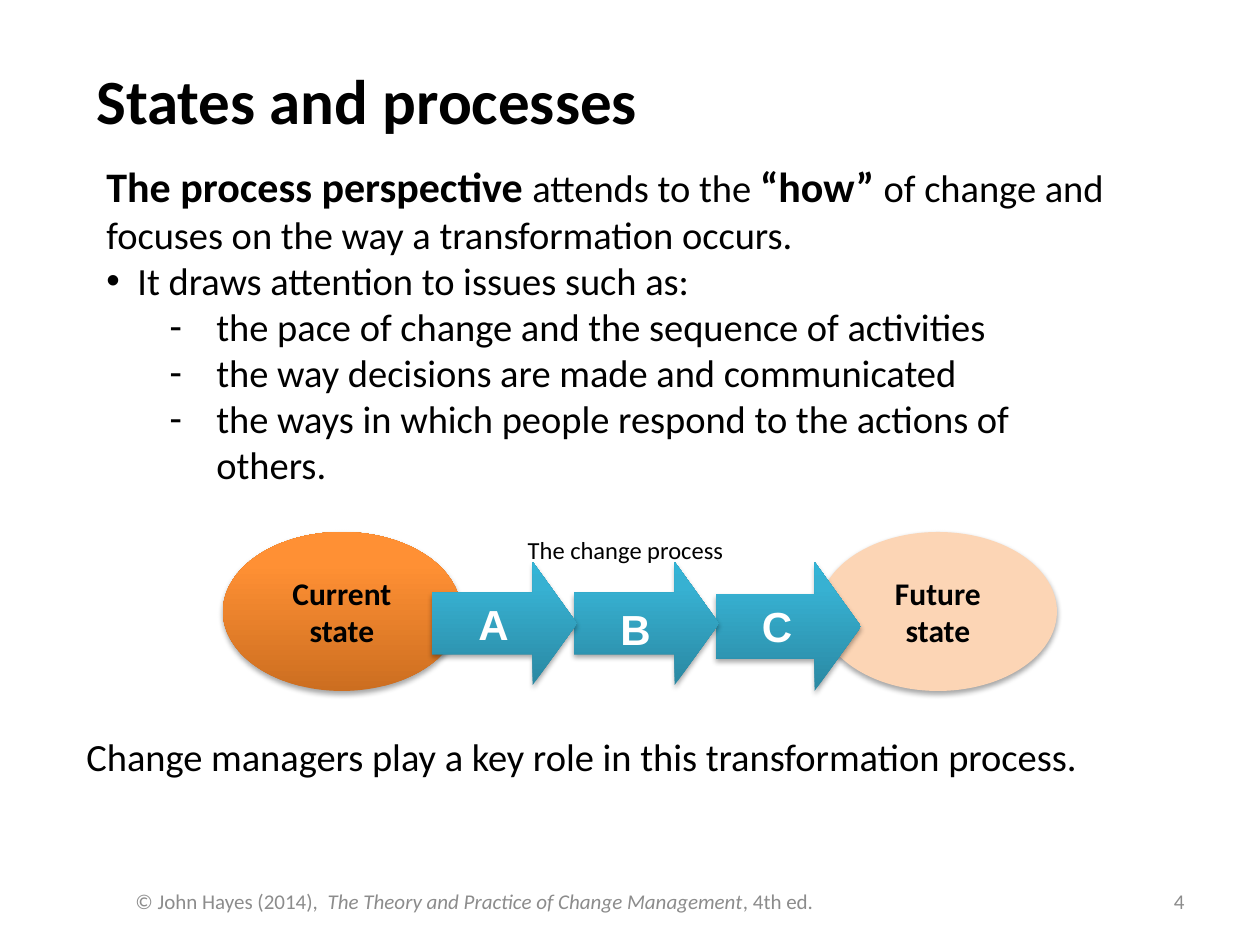
from copy import deepcopy
from dataclasses import dataclass

from lxml import etree
from pptx import Presentation, util as u
from pptx.dml.color import RGBColor
from pptx.enum import shapes, text
from pptx.oxml import ns

KIND = shapes.MSO_SHAPE
ALIGN = text.PP_ALIGN
ANCHOR = text.MSO_ANCHOR


@dataclass(frozen=True)
class Theme:
    font: str = "Calibri"
    label: str = "Arial"
    ink: str = "000000"
    grey: str = "8C8C8C"
    white: str = "FFFFFF"
    peach: str = "FCD5B5"
    orange: tuple = ((0, "CC6E20"), (0.8, "FF9034"), (1, "FF9136"))
    teal: tuple = ((0, "2A88A2"), (0.8, "37B1D2"), (1, "34B4D6"))
    title: int = 36
    lead: int = 24
    body: int = 22
    state: int = 18
    note: int = 14
    foot: int = 12


def px(n):
    return u.Emu(round(n * 914400 / 126))


def sub(node, tag, **attrs):
    return etree.SubElement(node, ns.qn(tag), {k: str(v) for k, v in attrs.items()})


class Deck:
    def __init__(self, theme):
        self.theme = theme
        self.file = Presentation()
        self.file.slide_width, self.file.slide_height = px(1260), px(945)
        self.slide = self.file.slides.add_slide(self.file.slide_layouts[6])
        self.host = self.slide.shapes

    def group(self):
        self.host = self.slide.shapes.add_group_shape().shapes

    def ungroup(self):
        self.host = self.slide.shapes

    def run(self, para, words, size, color=None, bold=False, italic=False, font=None):
        run = para.add_run()
        run.text = words
        face = run.font
        face.name = font or self.theme.font
        face.size = u.Pt(size)
        face.bold, face.italic = bold, italic
        face.color.rgb = RGBColor.from_string(color or self.theme.ink)

    def para(self, frame, runs, align=None, mark=None, left=0, hang=0, level=0):
        last = frame.paragraphs[-1]
        para = frame.add_paragraph() if last.runs else last
        para.alignment = align
        para.level = level
        if mark:
            props = para._p.get_or_add_pPr()
            props.set("marL", str(px(left)))
            props.set("indent", str(-px(hang)))
            sub(props, "a:buFont", typeface=self.theme.label)
            sub(props, "a:buChar", char=mark)
        for words, size, *rest in runs:
            self.run(para, words, size, *rest)

    def box(self, at, runs, align=None, fixed=False):
        frame = self.host.add_textbox(*map(px, at)).text_frame
        frame.word_wrap = True
        if fixed:
            frame.vertical_anchor = ANCHOR.MIDDLE
        else:
            frame.auto_size = text.MSO_AUTO_SIZE.SHAPE_TO_FIT_TEXT
        self.para(frame, runs, align)
        return frame

    def paint(self, shape, fill):
        if isinstance(fill, str):
            shape.fill.solid()
            shape.fill.fore_color.rgb = RGBColor.from_string(fill)
        else:
            shape.fill.gradient()
            shape.fill.gradient_angle = 90
            stops = shape._element.spPr.find(".//" + ns.qn("a:gsLst"))
            stops.append(deepcopy(stops[0]))
            for stop, (place, color) in zip(shape.fill.gradient_stops, fill):
                stop.position = place
                stop.color.rgb = RGBColor.from_string(color)
        shape.line.fill.background()

    def shade(self, shape):
        shape.shadow.inherit = False
        effect = shape._element.spPr.find(ns.qn("a:effectLst"))
        cast = sub(effect, "a:outerShdw", blurRad=u.Pt(3.1), dist=u.Pt(1.8),
                   dir=5400000, rotWithShape=0)
        tone = sub(cast, "a:srgbClr", val=self.theme.ink)
        sub(tone, "a:alpha", val=35000)

    def shape(self, kind, at, fill):
        shape = self.host.add_shape(kind, *map(px, at))
        self.paint(shape, fill)
        self.shade(shape)
        return shape

    def state(self, x, word, fill):
        frame = self.shape(KIND.OVAL, (x, 532, 238, 159), fill).text_frame
        frame.vertical_anchor = ANCHOR.MIDDLE
        for line in (word, "state"):
            self.para(frame, [(line, self.theme.state, None, True)], ALIGN.CENTER)

    def arrow(self, x, high, letter, top):
        t = self.theme
        shape = self.shape(KIND.RIGHT_ARROW, (x, 562, 145, high), t.teal)
        shape.adjustments[1] = 0.36
        frame = shape.text_frame
        frame.vertical_anchor = ANCHOR.TOP
        frame.margin_top = px(top)
        self.para(frame, [(letter, t.lead, t.white, True, False, t.label)], ALIGN.CENTER)


def main():
    t = Theme()
    deck = Deck(t)

    body = deck.box((94, 154, 1042, 344), [
        ("The process perspective ", t.lead, None, True),
        ("attends to the ", t.body),
        ("“how” ", t.lead, None, True),
        ("of change and focuses on the way a transformation occurs.", t.body),
    ])
    deck.para(body, [("It draws attention to issues such as:", t.body)],
              mark="•", left=31, hang=31)
    for issue in (
        "the pace of change and the sequence of activities",
        "the way decisions are made and communicated",
        "the ways in which people respond to the actions of others.",
    ):
        deck.para(body, [(issue, t.body)], mark="-", left=110, hang=47, level=1)

    deck.box((84, 55, 843, 89), [("States and processes", t.title, None, True)])
    deck.box((74, 727, 1111, 59),
             [("Change managers play a key role in this transformation process.", t.body)])
    deck.box((903, 876, 294, 50), [("4", t.foot, t.grey)], ALIGN.RIGHT, True)

    deck.group()
    deck.state(223, "Current", t.orange)
    deck.state(819, "Future", t.peach)
    for step, high, letter, top in ((2, 129, "C", 6), (1, 123, "B", 11), (0, 123, "A", 6)):
        deck.arrow(432 + 142 * step, high, letter, top)
    deck.box((432, 529, 387, 43), [("The change process", t.note)], ALIGN.CENTER)
    deck.ungroup()

    deck.box((123, 876, 963, 50), [
        ("© John Hayes (2014),  ", t.foot, t.grey),
        ("The Theory and Practice of Change Management", t.foot, t.grey, False, True),
        (", 4th ed.", t.foot, t.grey),
    ], fixed=True)

    deck.file.save("out.pptx")


if __name__ == "__main__":
    main()
